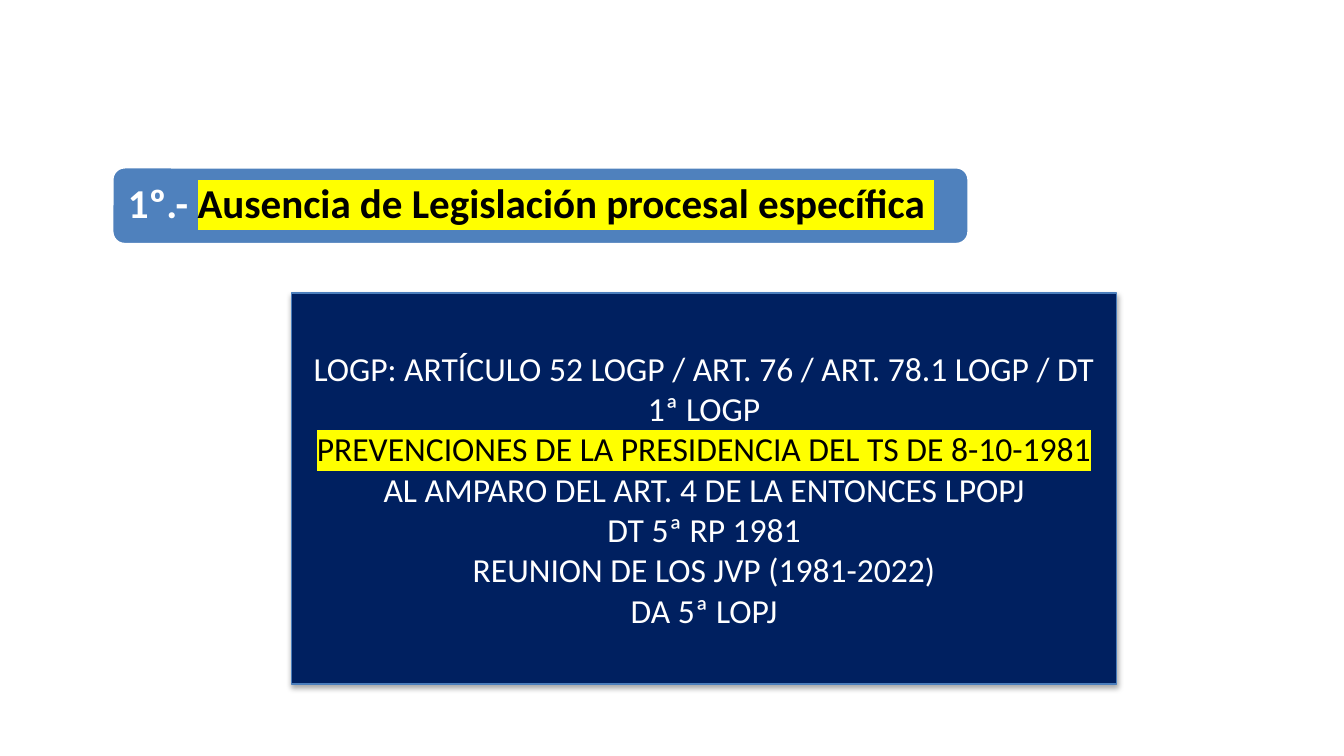
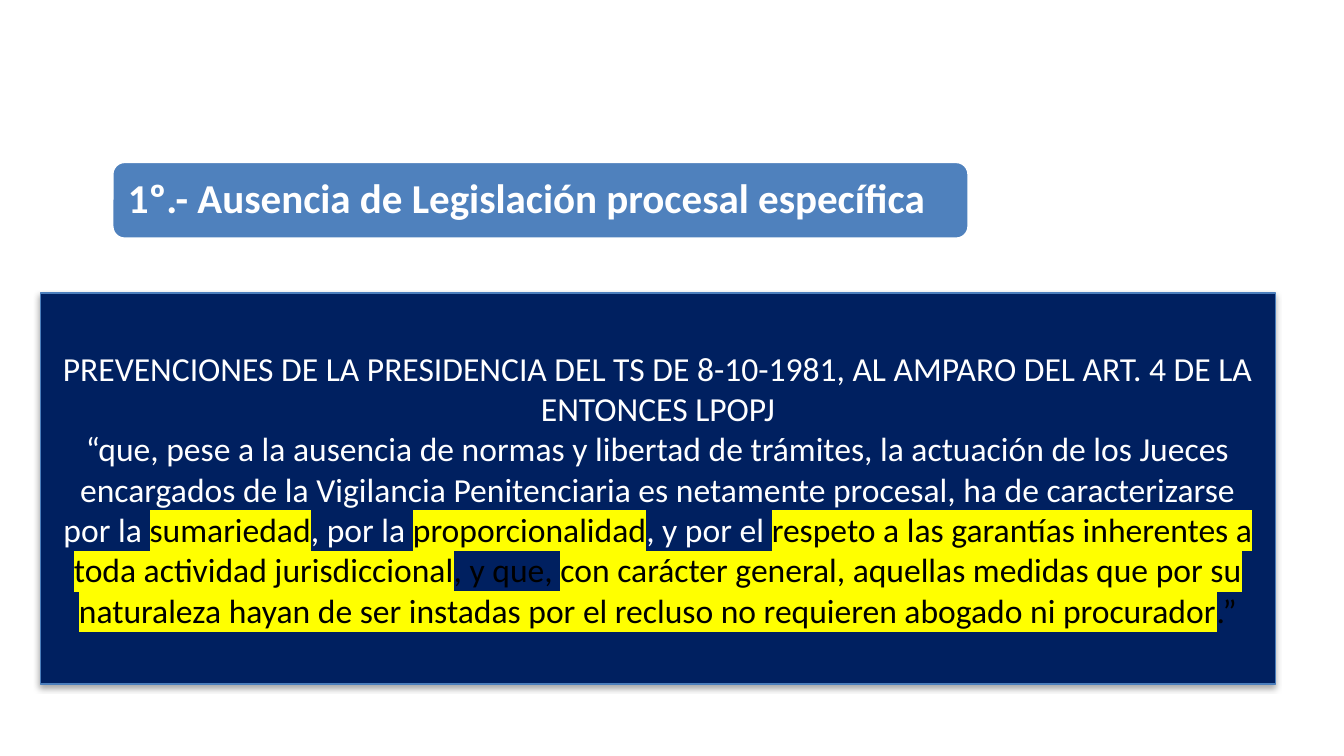
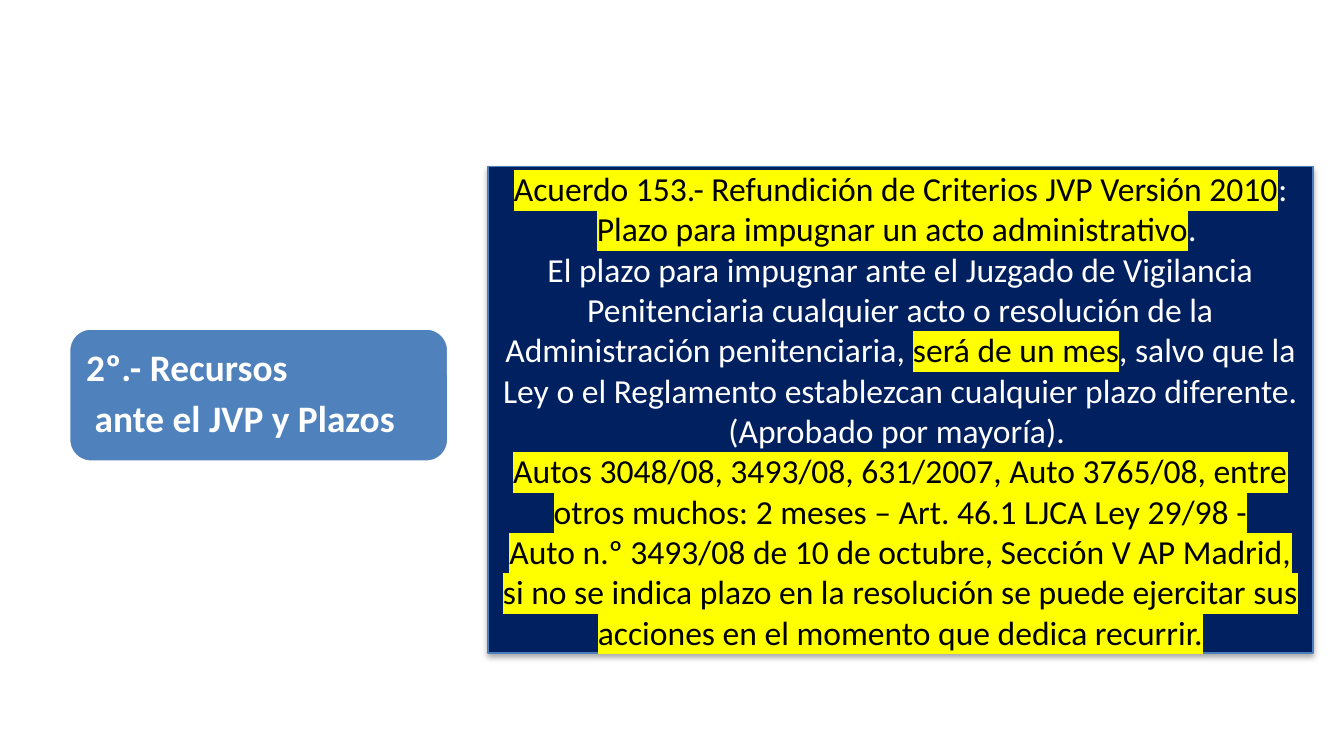
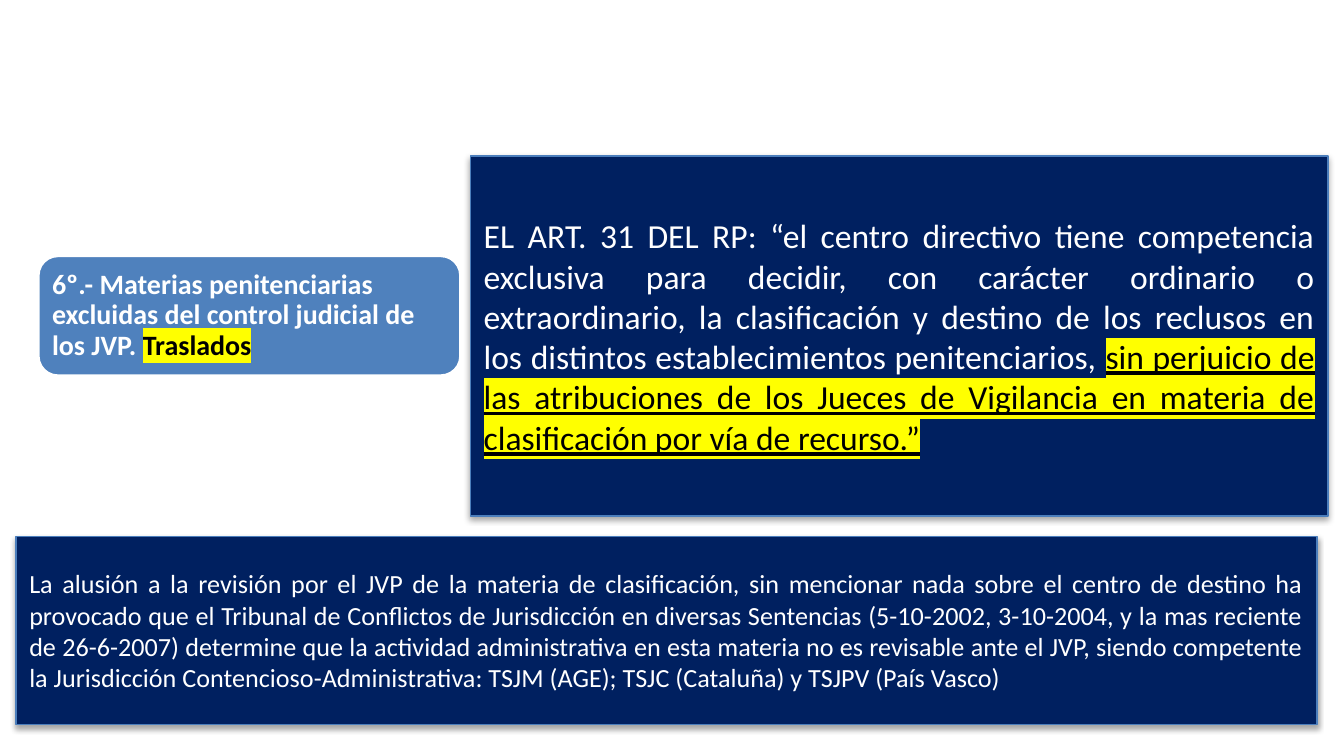
"""Build four slides on procedure before the penitentiary supervision courts."""
from lxml.etree import SubElement
from pptx import Presentation
from pptx.dml.color import RGBColor
from pptx.enum.shapes import MSO_SHAPE
from pptx.enum.text import MSO_ANCHOR, PP_ALIGN
from pptx.oxml.ns import qn
from pptx.util import Pt

FONT = "Calibri"
BLUE, NAVY, EDGE = "4F81BD", "002060", "4B7EBC"
WHITE, BLACK, YELLOW = "FFFFFF", "000000", "FFFF00"

PLAIN = dict(color=WHITE)
DARK = dict(color=BLACK)
MARK = dict(color=BLACK, highlight=YELLOW)
MARK_UNDERLINED = dict(MARK, underline=True)

SLIDES = [
    dict(
        heading=dict(at=(59.8, 89.3, 459.4, 41.8), size=22, paragraphs=[
            [("1º.- ", PLAIN), ("Ausencia de Legislación procesal específica ", MARK)],
        ]),
        panels=[dict(at=(156.2, 157, 442.1, 209.5), size=18, align=PP_ALIGN.CENTER, paragraphs=[
            [("LOGP: ARTÍCULO 52 LOGP / ART. 76 / ART. 78.1 LOGP / DT 1ª LOGP", PLAIN)],
            [("PREVENCIONES DE LA PRESIDENCIA DEL TS DE 8-10-1981", MARK),
             (" AL AMPARO DEL ART. 4 DE LA ENTONCES LPOPJ", PLAIN)],
            [("DT 5ª RP 1981", PLAIN)],
            [("REUNION DE LOS JVP (1981-2022)", PLAIN)],
            [("DA 5ª LOPJ", PLAIN)],
        ])],
    ),
    dict(
        heading=dict(at=(59.8, 86.4, 459.4, 41.8), size=22, paragraphs=[
            [("1º.- Ausencia de Legislación procesal específica", PLAIN)],
        ]),
        panels=[dict(at=(21.6, 157, 661.7, 209.5), size=18, align=PP_ALIGN.CENTER, paragraphs=[
            [("PREVENCIONES DE LA PRESIDENCIA DEL TS DE 8-10-1981, AL AMPARO DEL ART. 4 "
              "DE LA ENTONCES LPOPJ", PLAIN)],
            [("“que, pese a la ausencia de normas y libertad de trámites, la actuación de los "
              "Jueces encargados de la Vigilancia Penitenciaria es netamente procesal, ha de "
              "caracterizarse por la ", PLAIN),
             ("sumariedad", MARK),
             (", por la ", PLAIN),
             ("proporcionalidad", MARK),
             (", y por el ", PLAIN),
             ("respeto a las garantías inherentes a toda actividad jurisdiccional", MARK),
             (", y que, ", DARK),
             ("con carácter general, aquellas medidas que por su naturaleza hayan de ser "
              "instadas por el recluso no requieren abogado ni procurador", MARK),
             (".”", DARK)],
        ])],
    ),
    dict(
        heading=dict(at=(36.7, 175.7, 203.8, 72), size=20, paragraphs=[
            [("2º.- Recursos", PLAIN)],
            [(" ante el JVP y Plazos", PLAIN)],
        ]),
        panels=[dict(at=(261.4, 89.3, 442.1, 260.6), size=18, align=PP_ALIGN.CENTER, paragraphs=[
            [("Acuerdo 153.- Refundición de Criterios JVP Versión 2010", MARK),
             (": ", PLAIN),
             ("Plazo para impugnar un acto administrativo", MARK),
             (". ", PLAIN)],
            [("El plazo para impugnar ante el Juzgado de Vigilancia Penitenciaria cualquier acto "
              "o resolución de la Administración penitenciaria, ", PLAIN),
             ("será de un mes", MARK),
             (", salvo que la Ley o el Reglamento establezcan cualquier plazo diferente. "
              "(Aprobado por mayoría). ", PLAIN)],
            [("Autos 3048/08, 3493/08, 631/2007, Auto 3765/08, entre otros muchos: 2 meses – "
              "Art. 46.1 LJCA Ley 29/98 -", MARK)],
            [("Auto n.º 3493/08 de 10 de octubre, Sección V AP Madrid, si no se indica plazo en "
              "la resolución se puede ejercitar sus acciones en el momento que dedica "
              "recurrir.", MARK)],
        ])],
    ),
    dict(
        heading=dict(at=(20.2, 136.8, 226.8, 64.8), size=15, paragraphs=[
            [("6º.- Materias penitenciarias excluidas del control judicial de los JVP. ", PLAIN),
             ("Traslados", MARK)],
        ]),
        panels=[
            dict(at=(252, 83.5, 459.4, 193), size=18, align=PP_ALIGN.JUSTIFY, paragraphs=[
                [("EL ART. 31 DEL RP: “el centro directivo tiene competencia exclusiva para "
                  "decidir, con carácter ordinario o extraordinario, la clasificación y destino "
                  "de los reclusos en los distintos establecimientos penitenciarios, ", PLAIN),
                 ("sin perjuicio de las atribuciones de los Jueces de Vigilancia en materia de "
                  "clasificación por vía de recurso.”", MARK_UNDERLINED)],
            ]),
            dict(at=(8.6, 287.3, 697, 100.8), size=14, align=PP_ALIGN.JUSTIFY, paragraphs=[
                [("La alusión a la revisión por el JVP de la materia de clasificación, sin "
                  "mencionar nada sobre el centro de destino ha provocado que el Tribunal de "
                  "Conflictos de Jurisdicción en diversas Sentencias (5-10-2002, 3-10-2004, y la "
                  "mas reciente de 26-6-2007) determine que la actividad administrativa en esta "
                  "materia no es revisable ante el JVP, siendo competente la Jurisdicción "
                  "Contencioso-Administrativa: TSJM (AGE); TSJC (Cataluña) y TSJPV "
                  "(País Vasco)", PLAIN)],
            ]),
        ],
    ),
]


def rgb(value):
    return RGBColor.from_string(value)


def add_span(para, text, size, color, bold=False, underline=None, highlight=None):
    span = para.add_run()
    span.text = text
    font = span.font
    font.size, font.bold, font.underline = Pt(size), bold, underline
    font.color.rgb = rgb(color)
    if highlight:
        mark = SubElement(font._element, qn("a:highlight"))
        SubElement(mark, qn("a:srgbClr"), val=highlight)
    font.name = FONT


def add_box(page, kind, at, fill, line, line_width):
    box = page.shapes.add_shape(kind, *map(Pt, at))
    box.shadow.inherit = False
    box.fill.solid()
    box.fill.fore_color.rgb = rgb(fill)
    box.line.color.rgb = rgb(line)
    box.line.width = Pt(line_width)
    box.text_frame.word_wrap = True
    box.text_frame.vertical_anchor = MSO_ANCHOR.MIDDLE
    return box


def write(box, paragraphs, size, align, bold=False, line_spacing=None, gap=0):
    frame = box.text_frame
    for index, spans in enumerate(paragraphs):
        para = frame.add_paragraph() if index else frame.paragraphs[0]
        para.alignment = align
        para.line_spacing = line_spacing
        para.space_after = Pt(gap if index < len(paragraphs) - 1 else 0)
        for text, style in spans:
            add_span(para, text, size, bold=bold, **style)


def add_shadow(box):
    effects = box._element.spPr.find(qn("a:effectLst"))
    shadow = SubElement(effects, qn("a:outerShdw"), blurRad=str(Pt(3.1)), dist=str(Pt(1.8)),
                        dir="5400000", rotWithShape="0")
    color = SubElement(shadow, qn("a:srgbClr"), val=BLACK)
    SubElement(color, qn("a:alpha"), val="35000")


def add_heading(page, at, size, paragraphs):
    box = add_box(page, MSO_SHAPE.ROUNDED_RECTANGLE, at, BLUE, WHITE, 2)
    frame = box.text_frame
    inset = Pt(size * 0.3)
    frame.margin_left = frame.margin_right = frame.margin_top = frame.margin_bottom = inset
    write(box, paragraphs, size, PP_ALIGN.LEFT, bold=True, line_spacing=0.9, gap=size * 0.3)


def add_panel(page, at, size, align, paragraphs):
    box = add_box(page, MSO_SHAPE.RECTANGLE, at, NAVY, EDGE, 0.75)
    add_shadow(box)
    write(box, paragraphs, size, align)


def main():
    deck = Presentation()
    deck.slide_width, deck.slide_height = Pt(720), Pt(405)
    for content in SLIDES:
        page = deck.slides.add_slide(deck.slide_layouts[6])
        add_heading(page, **content["heading"])
        for panel in content["panels"]:
            add_panel(page, **panel)
    deck.save("out.pptx")


if __name__ == "__main__":
    main()
